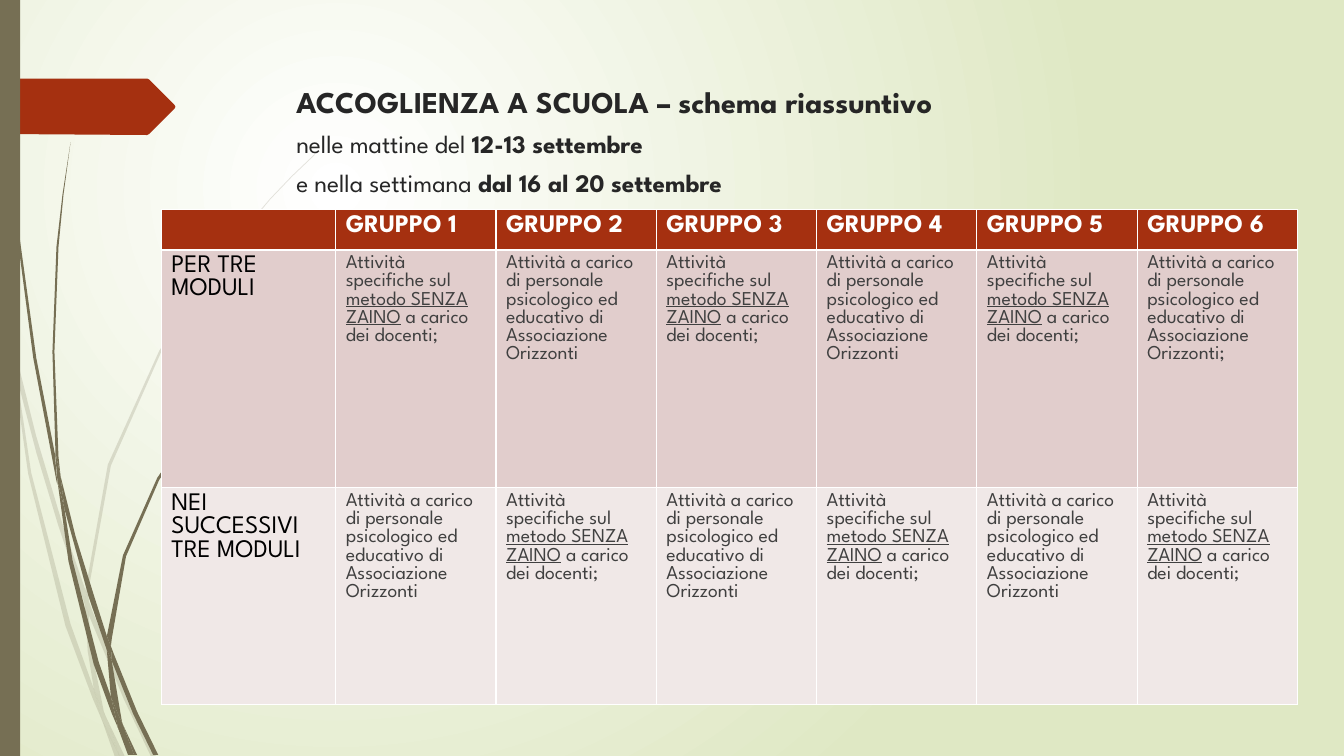
from lxml import etree
from pptx import Presentation
from pptx.dml.color import RGBColor
from pptx.enum.shapes import MSO_SHAPE
from pptx.oxml.ns import qn
from pptx.util import Inches, Pt

RECTANGLE = MSO_SHAPE.RECTANGLE
WHITE = RGBColor(0xFF, 0xFF, 0xFF)
BLACK = RGBColor(0, 0, 0)
PALE_GREEN = RGBColor(0xDF, 0xE8, 0xC4)
OLIVE = RGBColor(0x76, 0x6F, 0x54)
RUST = RGBColor(0xA5, 0x30, 0x10)
ROSE = RGBColor(0xE1, 0xCD, 0xCC)
LIGHT_ROSE = RGBColor(0xF0, 0xE8, 0xE7)
TITLE_GREY = RGBColor(0x26, 0x26, 0x26)
BODY_GREY = RGBColor(0x40, 0x40, 0x40)
FONT = "League Spartan"

# Outlines of the grass blades, in inches
FAINT_BLADES = [
    [(0.11, 3.5), (0.09, 3.22), (0, 2.82), (0, 2.99), (0.1, 3.44)],
    [(0.58, 5.22), (0.84, 5.99), (0.85, 5.86), (0.62, 5.2), (0.36, 4.33),
     (0.14, 3.45), (0.17, 3.76), (0.36, 4.49)],
    [(0.92, 6.07), (0.88, 5.96), (0.88, 6.1), (1.23, 6.94), (1.5, 7.51),
     (1.55, 7.51), (1.27, 6.92)],
    [(1.19, 7.51), (1.24, 7.51), (1.05, 7.11)],
    [(0.93, 6.83), (0.7, 6.19), (0.31, 4.69), (0.17, 3.76), (0.11, 3.5),
     (0.28, 4.7), (0.65, 6.21), (0.92, 6.93), (1.01, 7.14), (0.99, 7.07)],
    [(0.84, 5.99), (0.87, 6.46), (0.93, 6.83), (0.96, 6.92), (1.05, 7.11),
     (1.03, 7.06), (0.91, 6.46), (0.88, 6.1), (0.88, 6.08)],
    [(0.88, 5.84), (1.1, 4.62), (1.6, 3.49), (2.29, 2.45), (2.68, 1.98),
     (2.9, 1.75), (3.12, 1.54), (3.12, 1.53), (2.89, 1.75), (2.68, 1.97),
     (2.28, 2.44), (1.58, 3.48), (1.07, 4.61), (0.85, 5.84), (0.85, 5.86),
     (0.88, 5.96)],
    [(1.01, 7.14), (1.14, 7.51), (1.19, 7.51)],
    [(0.88, 6.08), (0.88, 6.1), (0.88, 5.96), (0.85, 5.86), (0.84, 5.99)],
    [(0.96, 6.92), (0.93, 6.83), (0.99, 7.07), (1.01, 7.14), (1.19, 7.51),
     (1.05, 7.11)],
]
DARK_BLADES = [
    [(0.07, 1.1), (0.17, 2.33), (0.33, 3.55), (0.56, 4.77), (0.57, 4.81),
     (0.55, 4.57), (0.55, 4.53), (0.36, 3.55), (0.19, 2.32), (0.08, 1.09),
     (0.05, 0.48), (0.04, 0), (0.03, 0), (0.04, 0.48)],
    [(0.88, 5.92), (1.06, 6.45), (1.06, 6.33), (1.06, 6.31), (0.93, 5.9),
     (0.75, 5.32), (0.6, 4.72), (0.64, 5.05)],
    [(1.13, 6.49), (1.1, 6.41), (1.11, 6.56), (1.32, 7.08), (1.52, 7.49),
     (1.57, 7.49), (1.36, 7.06)],
    [(1.1, 6.91), (0.98, 6.57), (0.72, 5.56), (0.64, 5.05), (0.57, 4.77),
     (0.68, 5.57), (0.93, 6.59), (1.11, 7.08), (1.17, 7.22), (1.16, 7.17)],
    [(0.6, 4.72), (0.58, 4.53), (0.54, 3.49), (0.58, 2.45), (0.63, 1.93),
     (0.7, 1.41), (0.62, 1.93), (0.56, 2.45), (0.52, 3.49), (0.55, 4.49)],
    [(1.33, 7.49), (1.36, 7.49), (1.22, 7.19)],
    [(0.57, 4.77), (0.64, 5.05), (0.6, 4.72), (0.55, 4.49), (0.55, 4.53)],
    [(1.11, 6.33), (1.25, 5.52), (1.58, 4.76), (2.05, 4.06), (2.31, 3.74),
     (2.45, 3.59), (2.61, 3.44), (2.6, 3.44), (2.45, 3.58), (2.31, 3.73),
     (2.04, 4.05), (1.56, 4.74), (1.22, 5.51), (1.06, 6.31), (1.1, 6.41)],
    [(1.17, 7.22), (1.27, 7.49), (1.31, 7.49)],
    [(1.06, 6.45), (1.1, 6.91), (1.16, 7.06), (1.22, 7.19), (1.21, 7.16),
     (1.11, 6.56), (1.09, 6.51)],
    [(1.06, 6.45), (1.09, 6.51), (1.11, 6.56), (1.1, 6.41), (1.06, 6.31)],
    [(1.16, 7.06), (1.1, 6.91), (1.16, 7.17), (1.17, 7.22), (1.3, 7.49),
     (1.33, 7.49), (1.22, 7.19)],
]
ARROW = [(0, 0.78), (1.46, 0.78), (1.48, 0.79), (1.73, 1.04), (1.74, 1.06),
         (1.73, 1.08), (1.48, 1.33), (1.46, 1.34), (0, 1.33)]

prs = Presentation()
prs.slide_width, prs.slide_height = Inches(13.33), Inches(7.5)
slide = prs.slides.add_slide(prs.slide_layouts[6])

# Background: white glow a quarter of the way in
glow = slide.background.fill
glow.gradient()
for stop, color in zip(glow.gradient_stops, (WHITE, PALE_GREEN)):
    stop.color.rgb = color
gradient = slide.element.find(".//" + qn("a:gradFill"))
gradient.remove(gradient.find(qn("a:lin")))
circle = etree.SubElement(gradient, qn("a:path"), {"path": "circle"})
etree.SubElement(circle, qn("a:fillToRect"),
                 {"l": "50000", "t": "50000", "r": "100000", "b": "100000"})


def paint(shape, color, opacity=100):
    """Give a flat fill with no line or shadow; opacity is in percent."""
    shape.shadow.inherit = False
    shape.line.fill.background()
    shape.fill.solid()
    shape.fill.fore_color.rgb = color
    if opacity < 100:
        rgb = shape.fill._xPr.find(".//" + qn("a:srgbClr"))
        etree.SubElement(rgb, qn("a:alpha"), {"val": str(opacity * 1000)})


def add_run(paragraph, text, **font_format):
    run = paragraph.add_run()
    run.text = text
    run.font.name = FONT
    run.font.color.rgb = font_format.pop("color")
    for name, value in font_format.items():
        setattr(run.font, name, value)


outlines = [(blade, OLIVE, 20) for blade in FAINT_BLADES]
outlines += [(blade, OLIVE, 100) for blade in DARK_BLADES]
outlines.append((ARROW, RUST, 100))
for outline, color, opacity in outlines:
    points = [(Inches(x), Inches(y)) for x, y in outline]
    builder = slide.shapes.build_freeform(*points[0])
    builder.add_line_segments(points[1:], close=True)
    paint(builder.convert_to_shape(), color, opacity)

side_bar = slide.shapes.add_shape(RECTANGLE, 0, 0, Inches(0.2), Inches(7.5))
paint(side_bar, OLIVE)

# Title
title = slide.shapes.add_textbox(Inches(2.84), Inches(0.68), Inches(9.75), Inches(1.06))
title.text_frame.word_wrap = True
heading = title.text_frame.paragraphs[0]
heading.line_spacing = 1.28
title_lines = [
    (21.6, [("ACCOGLIENZA A SCUOLA – schema riassuntivo", True)]),
    (18, [("nelle mattine del ", False), ("12-13 settembre", True)]),
    (18, [("e nella settimana ", False), ("dal 16 al 20 settembre", True)]),
]
for number, (size, parts) in enumerate(title_lines):
    if number:
        heading.add_line_break()
    for text, bold in parts:
        add_run(heading, text, size=Pt(size), bold=bold, color=TITLE_GREY)

# Schedule: the two activities alternate between groups and swap in the second row
METHOD = [("Attività specifiche sul ", False), ("metodo SENZA ZAINO", True),
          (" a carico dei docenti;", False)]
STAFF = [("Attività a carico di personale psicologico ed educativo di "
          "Associazione Orizzonti", False)]
GROUPS = 6
schedule = slide.shapes.add_table(3, GROUPS + 1, Inches(1.6), Inches(2.08),
                                  Inches(11.28), Inches(4.92)).table
schedule.horz_banding = False
for column, width in zip(schedule.columns, [1.73] + [1.59] * GROUPS):
    column.width = Inches(width)
for row, height, fill in zip(schedule.rows, (0.4, 2.36, 2.15), (RUST, ROSE, LIGHT_ROSE)):
    row.height = Inches(height)
    for cell in row.cells:
        cell.fill.solid()
        cell.fill.fore_color.rgb = fill

for group in range(1, GROUPS + 1):
    add_run(schedule.cell(0, group).text_frame.paragraphs[0], f"GRUPPO {group}",
            size=Pt(18), bold=True, color=WHITE)
for row, period in enumerate(("PER TRE MODULI", "NEI SUCCESSIVI TRE MODULI"), 1):
    add_run(schedule.cell(row, 0).text_frame.paragraphs[0], period,
            size=Pt(18), bold=False, color=BLACK)
    for group in range(1, GROUPS + 1):
        activity = schedule.cell(row, group).text_frame.paragraphs[0]
        activity.space_before = Pt(10)
        for text, underline in (STAFF if (row + group) % 2 else METHOD):
            add_run(activity, text, size=Pt(14), bold=False,
                    underline=underline, color=BODY_GREY)
add_run(schedule.cell(1, GROUPS).text_frame.paragraphs[0], ";",
        size=Pt(14), bold=False, color=BODY_GREY)

prs.save("out.pptx")
